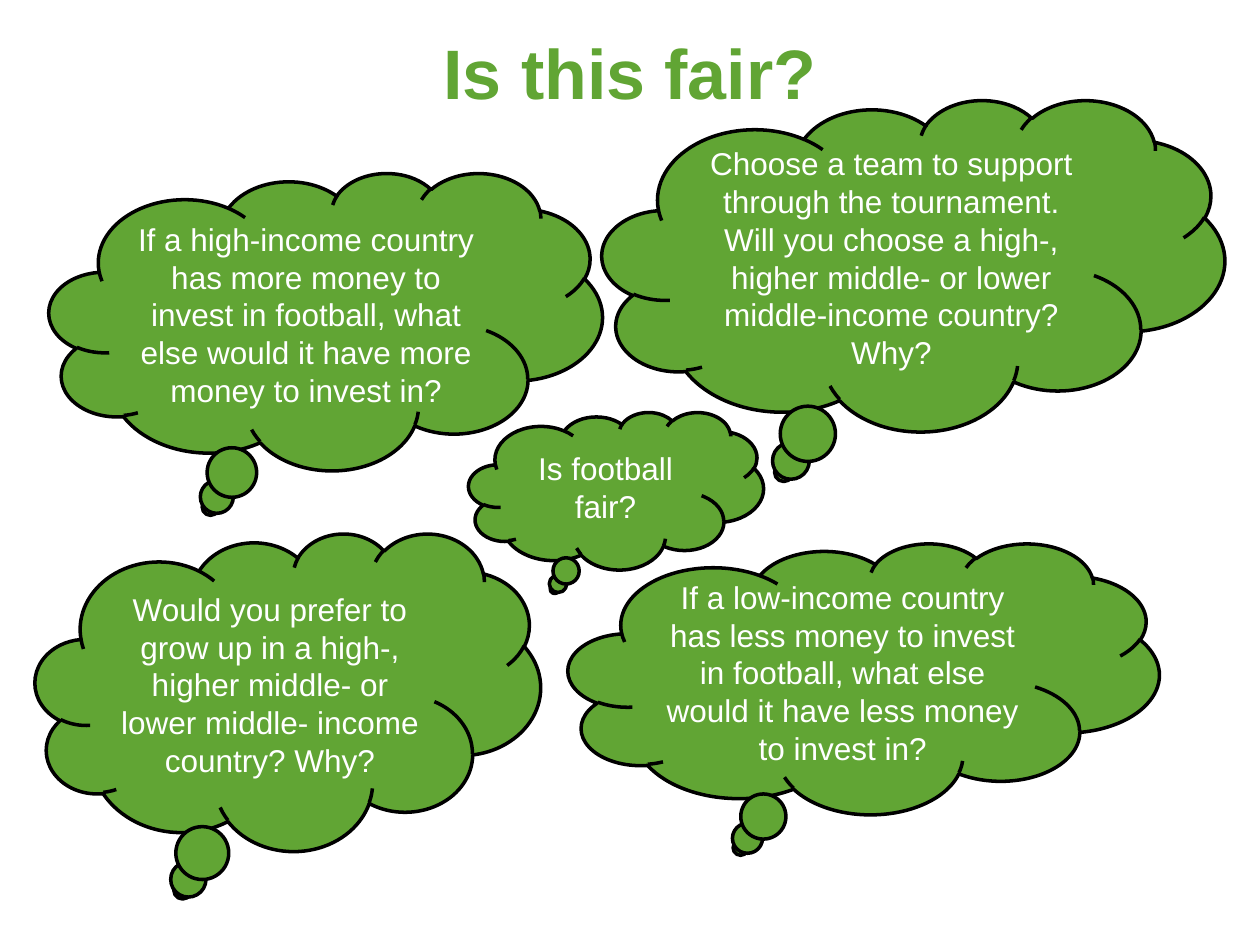
import pptx
import pptx.util
import pptx.dml.color
import pptx.enum.shapes
import pptx.enum.text

Inches = pptx.util.Inches
Pt = pptx.util.Pt
GREEN = pptx.dml.color.RGBColor(0x61, 0xA5, 0x34)
WHITE = pptx.dml.color.RGBColor(0xFF, 0xFF, 0xFF)
BLACK = pptx.dml.color.RGBColor(0x00, 0x00, 0x00)


def write_centred(frame, lines, size, colour, bold):
    frame.word_wrap = True
    frame.vertical_anchor = pptx.enum.text.MSO_ANCHOR.MIDDLE
    frame.text = "\n".join(lines)
    for paragraph in frame.paragraphs:
        paragraph.alignment = pptx.enum.text.PP_ALIGN.CENTER
        paragraph.font.name = "Arial"
        paragraph.font.size = Pt(size)
        paragraph.font.bold = bold
        paragraph.font.color.rgb = colour


presentation = pptx.Presentation()
presentation.slide_width = Inches(10)
presentation.slide_height = Inches(7.5)
slide = presentation.slides.add_slide(presentation.slide_layouts[6])

heading = slide.shapes.add_textbox(Inches(0.5), Inches(0.17), Inches(9), Inches(0.79))
write_centred(heading.text_frame, ["Is this fair?"], 40, GREEN, True)

questions = [
    ((0.39, 1.37, 4.39, 2.36),
     ["If a high-income country has more money to invest in football, "
      "what else would it have more money to invest in?"]),
    ((4.78, 0.79, 4.94, 2.63),
     ["Choose a team to support through the tournament.",
      "Will you choose a high-, higher middle- or lower middle-income country? Why?"]),
    ((4.51, 4.31, 4.69, 2.15),
     ["If a low-income country has less money to invest in football, "
      "what else would it have less money to invest in?"]),
    ((3.72, 3.27, 2.34, 1.25),
     ["Is football fair?"]),
    ((0.28, 4.23, 4.01, 2.52),
     ["Would you prefer to grow up in a high-, higher middle- or "
      "lower middle- income country? Why?"]),
]

for place, lines in questions:
    thought = slide.shapes.add_shape(
        pptx.enum.shapes.MSO_SHAPE.CLOUD_CALLOUT, *[Inches(length) for length in place])
    thought.shadow.inherit = False
    thought.fill.solid()
    thought.fill.fore_color.rgb = GREEN
    thought.line.color.rgb = BLACK
    thought.line.width = Pt(2)
    write_centred(thought.text_frame, lines, 18, WHITE, False)

presentation.save("out.pptx")
